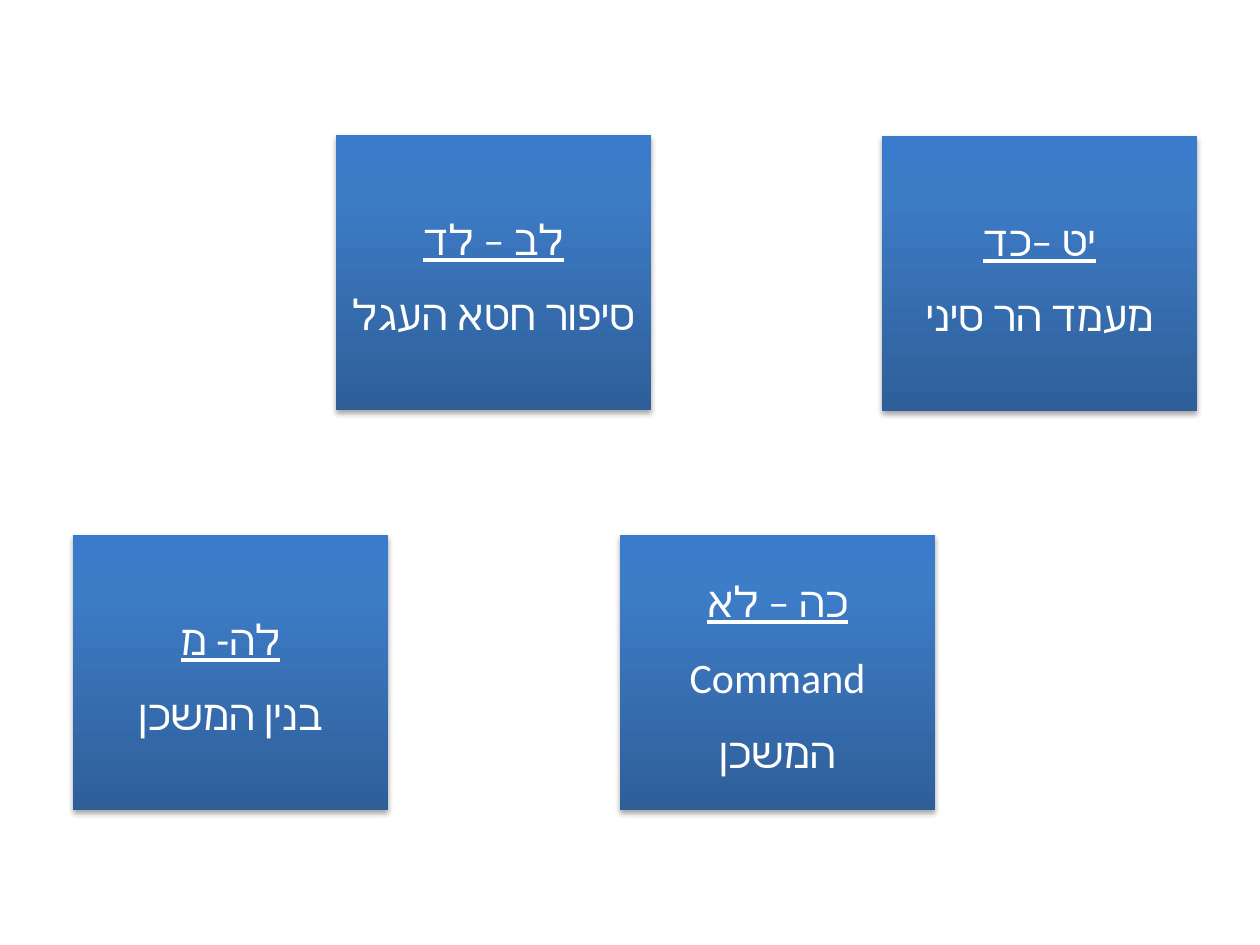
"""Build a slide of four boxes outlining groups of chapters and their themes."""
from copy import deepcopy
from typing import NamedTuple

from pptx import Presentation, util as u
from pptx.dml import color
from pptx.enum import shapes, text
from pptx.oxml import ns, parse_xml

SCALE = 914400 / 126
BOX_WIDTH, BOX_HEIGHT = 315, 275
FONT = "Calibri"
COLORS = {"bottom": "2F5F99", "middle": "3D7CC7", "top": "3A7CCB",
          "text": "FFFFFF", "shadow": "000000"}
GRADIENT = (("bottom", 0), ("middle", 0.8), ("top", 1))
SHADOW = (
    f'<a:outerShdw {ns.nsdecls("a")} blurRad="40000" dist="23000" dir="5400000" '
    f'rotWithShape="0"><a:srgbClr val="{COLORS["shadow"]}">'
    '<a:alpha val="35000"/></a:srgbClr></a:outerShdw>'
)


class Section(NamedTuple):
    left: int
    top: int
    chapters: str
    themes: tuple[str, ...]


SECTIONS = (
    Section(882, 136, "יט –כד", ("מעמד הר סיני",)),
    Section(620, 535, "כה – לא", ("Command", "המשכן")),
    Section(336, 135, "לב – לד", ("סיפור חטא העגל",)),
    Section(73, 535, "לה- מ", ("בנין המשכן",)),
)


def px(length: int) -> u.Emu:
    return u.Emu(round(length * SCALE))


def rgb(name: str) -> color.RGBColor:
    return color.RGBColor.from_string(COLORS[name])


def style_box(box) -> None:
    box.fill.gradient()
    box.fill.gradient_angle = 90
    properties = box._element.spPr
    stop_list = properties.find(ns.qn("a:gradFill")).find(ns.qn("a:gsLst"))
    stop_list.append(deepcopy(stop_list[-1]))
    for stop, (name, position) in zip(box.fill.gradient_stops, GRADIENT):
        stop.color.rgb = rgb(name)
        stop.position = position
    box.line.fill.background()
    box.shadow.inherit = False
    properties.find(ns.qn("a:effectLst")).append(parse_xml(SHADOW))


def style_paragraph(paragraph, underline: bool) -> None:
    paragraph.alignment = text.PP_ALIGN.CENTER
    paragraph.line_spacing = 1.15
    paragraph.space_after = u.Pt(10)
    paragraph._p.get_or_add_pPr().set("rtl", "1")
    for run in paragraph.runs:
        run.font.size = u.Pt(24)
        run.font.name = FONT
        run.font.underline = underline
        run.font.color.rgb = rgb("text")
        run._r.get_or_add_rPr().append(
            parse_xml(f'<a:cs {ns.nsdecls("a")} typeface="{FONT}"/>'))


def draw_section(slide, section: Section) -> None:
    box = slide.shapes.add_shape(
        shapes.MSO_SHAPE.RECTANGLE, px(section.left), px(section.top),
        px(BOX_WIDTH), px(BOX_HEIGHT))
    style_box(box)
    frame = box.text_frame
    frame.word_wrap = True
    frame.vertical_anchor = text.MSO_ANCHOR.MIDDLE
    frame.text = "\n".join((section.chapters, *section.themes))
    for index, paragraph in enumerate(frame.paragraphs):
        style_paragraph(paragraph, underline=index == 0)


def main() -> None:
    deck = Presentation()
    deck.slide_width, deck.slide_height = px(1260), px(945)
    slide = deck.slides.add_slide(deck.slide_layouts[6])
    for section in SECTIONS:
        draw_section(slide, section)
    deck.save("out.pptx")


if __name__ == "__main__":
    main()
